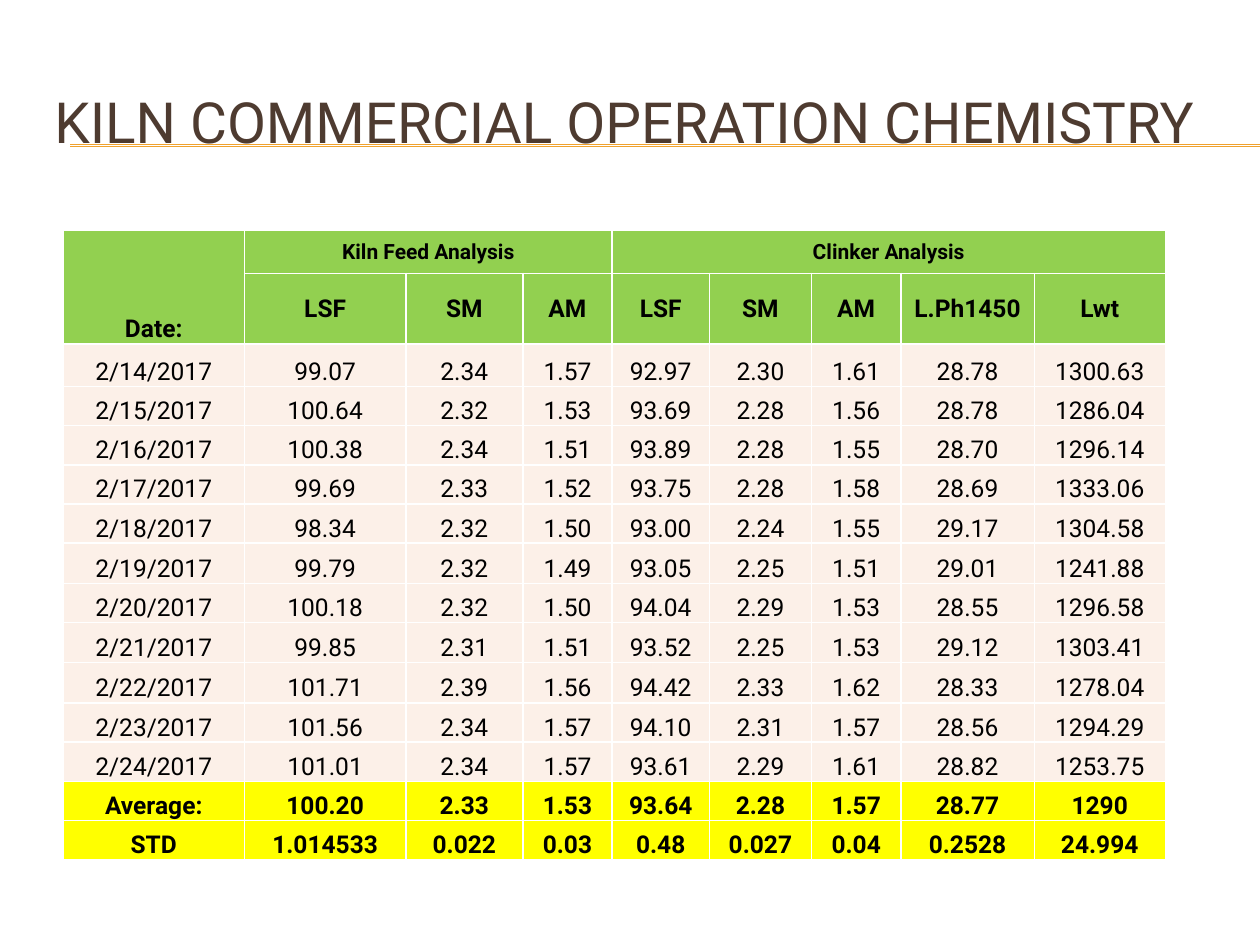
from dataclasses import dataclass

from lxml.etree import SubElement
from pptx import Presentation
from pptx.dml.color import RGBColor
from pptx.enum.shapes import MSO_CONNECTOR
from pptx.enum.text import MSO_ANCHOR, MSO_AUTO_SIZE, PP_ALIGN
from pptx.oxml.ns import qn
from pptx.util import Cm, Pt


@dataclass(frozen=True)
class Theme:
    font: str = "Roboto"
    title_color: str = "4E3B30"
    rule_color: str = "F0A22E"
    text_color: str = "000000"
    border_color: str = "FFFFFF"
    header_fill: str = "92D050"
    day_fill: str = "FCF0E8"
    summary_fill: str = "FFFF00"
    title_size: float = 32.4
    group_size: float = 12
    cell_size: float = 14
    rule_width: float = 0.75
    border_width: float = 1


THEME = Theme()

GROUPS = ["Date:", "Kiln Feed Analysis", "", "", "Clinker Analysis", "", "", "", ""]
MEASURES = ["", "LSF", "SM", "AM", "LSF", "SM", "AM", "L.Ph1450", "Lwt"]
DAYS = [
    ["2/14/2017", "99.07", "2.34", "1.57", "92.97", "2.30", "1.61", "28.78", "1300.63"],
    ["2/15/2017", "100.64", "2.32", "1.53", "93.69", "2.28", "1.56", "28.78", "1286.04"],
    ["2/16/2017", "100.38", "2.34", "1.51", "93.89", "2.28", "1.55", "28.70", "1296.14"],
    ["2/17/2017", "99.69", "2.33", "1.52", "93.75", "2.28", "1.58", "28.69", "1333.06"],
    ["2/18/2017", "98.34", "2.32", "1.50", "93.00", "2.24", "1.55", "29.17", "1304.58"],
    ["2/19/2017", "99.79", "2.32", "1.49", "93.05", "2.25", "1.51", "29.01", "1241.88"],
    ["2/20/2017", "100.18", "2.32", "1.50", "94.04", "2.29", "1.53", "28.55", "1296.58"],
    ["2/21/2017", "99.85", "2.31", "1.51", "93.52", "2.25", "1.53", "29.12", "1303.41"],
    ["2/22/2017", "101.71", "2.39", "1.56", "94.42", "2.33", "1.62", "28.33", "1278.04"],
    ["2/23/2017", "101.56", "2.34", "1.57", "94.10", "2.31", "1.57", "28.56", "1294.29"],
    ["2/24/2017", "101.01", "2.34", "1.57", "93.61", "2.29", "1.61", "28.82", "1253.75"],
]
SUMMARY = [
    ["Average:", "100.20", "2.33", "1.53", "93.64", "2.28", "1.57", "28.77", "1290"],
    ["STD", "1.014533", "0.022", "0.03", "0.48", "0.027", "0.04", "0.2528", "24.994"],
]
COLUMN_WIDTHS = [3.66, 3.25, 2.36, 1.8, 1.96, 2.06, 1.8, 2.69, 2.64]
ROW_HEIGHTS = [0.86, 1.42, 0.86] + [0.79] * 4 + [0.81, 0.79, 0.81, 0.81] + [0.79] * 4


def set_font(paragraph, size, color, bold=False):
    font = paragraph.font
    font.name = THEME.font
    font.size = Pt(size)
    font.bold = bold
    font.color.rgb = RGBColor.from_string(color)


def add_title(slide, text):
    title = slide.shapes.title
    title.left, title.top, title.width, title.height = Cm(0.84), Cm(1.27), Cm(24.13), Cm(2.34)
    frame = title.text_frame
    frame.text = text
    frame.word_wrap = True
    frame.auto_size = MSO_AUTO_SIZE.NONE
    frame.vertical_anchor = MSO_ANCHOR.MIDDLE
    heading = frame.paragraphs[0]
    heading.alignment = PP_ALIGN.LEFT
    set_font(heading, THEME.title_size, THEME.title_color)


def add_rule(slide, y):
    """Draw a horizontal rule from the left margin to the slide edge, behind the title."""
    rule = slide.shapes.add_connector(MSO_CONNECTOR.STRAIGHT, Cm(1.42), Cm(y), Cm(25.4), Cm(y))
    rule.line.color.rgb = RGBColor.from_string(THEME.rule_color)
    rule.line.width = Pt(THEME.rule_width)
    SubElement(rule._element.spPr, qn("a:effectLst"))
    slide.shapes._spTree.insert(2, rule._element)


def add_borders(cell):
    properties = cell._tc.get_or_add_tcPr()
    for side in ("a:lnL", "a:lnR", "a:lnT", "a:lnB"):
        border = SubElement(properties, qn(side), w=str(Pt(THEME.border_width)))
        fill = SubElement(border, qn("a:solidFill"))
        SubElement(fill, qn("a:srgbClr"), val=THEME.border_color)


def format_cell(cell, text, fill, size, bold, anchor):
    add_borders(cell)
    cell.fill.solid()
    cell.fill.fore_color.rgb = RGBColor.from_string(fill)
    cell.margin_left = cell.margin_right = cell.margin_top = Cm(0.02)
    cell.margin_bottom = 0
    cell.vertical_anchor = anchor
    cell.text = text
    paragraph = cell.text_frame.paragraphs[0]
    paragraph.alignment = PP_ALIGN.CENTER
    set_font(paragraph, size, THEME.text_color, bold)


def add_analysis_table(slide):
    middle, bottom = MSO_ANCHOR.MIDDLE, MSO_ANCHOR.BOTTOM
    rows = [(GROUPS, THEME.header_fill, THEME.group_size, True, middle),
            (MEASURES, THEME.header_fill, THEME.cell_size, True, middle)]
    rows += [(day, THEME.day_fill, THEME.cell_size, False, bottom) for day in DAYS]
    rows += [(line, THEME.summary_fill, THEME.cell_size, True, bottom) for line in SUMMARY]

    table = slide.shapes.add_table(
        len(rows), len(COLUMN_WIDTHS), Cm(1.27), Cm(4.65),
        Cm(sum(COLUMN_WIDTHS)), Cm(sum(ROW_HEIGHTS))).table
    table.first_row = table.horz_banding = False
    for column, width in zip(table.columns, COLUMN_WIDTHS):
        column.width = Cm(width)
    for row, height, (texts, *style) in zip(table.rows, ROW_HEIGHTS, rows):
        row.height = Cm(height)
        for cell, text in zip(row.cells, texts):
            format_cell(cell, text, *style)

    date_header = table.cell(0, 0)
    date_header.vertical_anchor = bottom
    date_header.text_frame.paragraphs[0].font.size = Pt(THEME.cell_size)
    date_header.merge(table.cell(1, 0))
    table.cell(0, 1).merge(table.cell(0, 3))
    table.cell(0, 4).merge(table.cell(0, 8))


def main():
    presentation = Presentation()
    presentation.slide_width, presentation.slide_height = Cm(25.4), Cm(19.05)
    title_only = presentation.slide_layouts[5]
    slide = presentation.slides.add_slide(title_only)
    add_title(slide, "KILN COMMERCIAL OPERATION CHEMISTRY")
    for y in (2.92, 2.95):
        add_rule(slide, y)
    add_analysis_table(slide)
    presentation.save("out.pptx")


if __name__ == "__main__":
    main()
